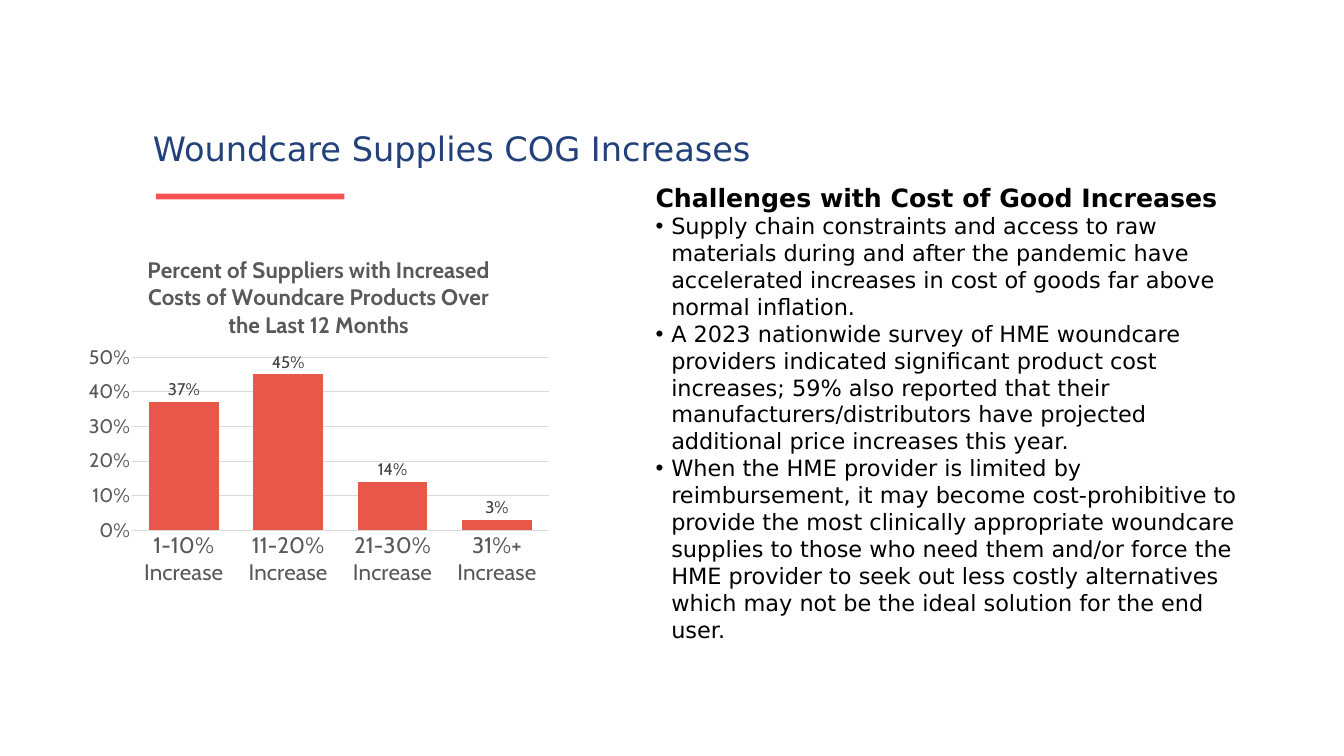
from dataclasses import dataclass

from lxml import etree
from pptx import Presentation
from pptx.chart.data import CategoryChartData
from pptx.dml.color import RGBColor
from pptx.enum import chart as ch
from pptx.enum import shapes, text
from pptx.oxml import parse_xml
from pptx.oxml.ns import nsdecls, qn
from pptx.util import Pt


@dataclass(frozen=True)
class Theme:
    navy: str = "22417B"
    coral: str = "F75152"
    bar: str = "E9564A"
    ink: str = "000000"
    grey: str = "595959"
    label: str = "404040"
    rule: str = "D9D9D9"
    text_font: str = "DejaVu Sans"
    chart_font: str = "Cabin"
    title_size: int = 48
    heading_size: int = 36
    body_size: int = 32
    axis_size: int = 28
    label_size: int = 24


@dataclass(frozen=True)
class Box:
    left: float
    top: float
    width: float
    height: float

    def points(self) -> tuple:
        return Pt(self.left), Pt(self.top), Pt(self.width), Pt(self.height)


@dataclass(frozen=True)
class Point:
    words: str
    bulleted: bool = True


THEME = Theme()
TITLE_BOX = Box(211, 106.5, 1557.5, 163.5)
ACCENT_BOX = Box(222.5, 276.5, 269.5, 8.5)
BODY_BOX = Box(929, 256.5, 851.5, 768)
CHART_BOX = Box(112.5, 343.5, 685.5, 504.5)
PLOT_AREA = {"x": 0.11, "y": 0.33, "w": 0.87, "h": 0.49}
HANGING = Pt(22.5)

CHALLENGES = [
    Point("Challenges with Cost of Good Increases", bulleted=False),
    Point("Supply chain constraints and access to raw materials during and after the "
          "pandemic have accelerated increases in cost of goods far above normal inflation."),
    Point("A 2023 nationwide survey of HME woundcare providers indicated significant product "
          "cost increases; 59% also reported that their manufacturers/distributors have "
          "projected additional price increases this year."),
    Point("When the HME provider is limited by reimbursement, it may become cost-prohibitive "
          "to provide the most clinically appropriate woundcare supplies to those who need "
          "them and/or force the HME provider to seek out less costly alternatives which may "
          "not be the ideal solution for the end user."),
]
CHART_TITLE = "Percent of Suppliers with Increased Costs of Woundcare Products Over the Last 12 Months"
COST_INCREASES = {
    "1-10% Increase": 0.37,
    "11-20% Increase": 0.45,
    "21-30% Increase": 0.14,
    "31%+ Increase": 0.03,
}


def style_font(font, name: str, size: int, color: str, bold: bool = False) -> None:
    font.name, font.size, font.bold = name, Pt(size), bold
    font.color.rgb = RGBColor.from_string(color)


def place(placeholder, box: Box):
    """Move a placeholder and return its top-anchored text frame."""
    placeholder.left, placeholder.top, placeholder.width, placeholder.height = box.points()
    frame = placeholder.text_frame
    frame.word_wrap = True
    frame.auto_size = text.MSO_AUTO_SIZE.NONE
    frame.vertical_anchor = text.MSO_ANCHOR.TOP
    return frame


def set_bullet(paragraph, bulleted: bool) -> None:
    props = paragraph._p.get_or_add_pPr()
    props.set("marL", str(HANGING if bulleted else 0))
    props.set("indent", str(-HANGING if bulleted else 0))
    if bulleted:
        etree.SubElement(props, qn("a:buFont")).set("typeface", "Arial")
        etree.SubElement(props, qn("a:buChar")).set("char", "•")
    else:
        etree.SubElement(props, qn("a:buNone"))


def write_title(slide) -> None:
    frame = place(slide.shapes.title, TITLE_BOX)
    frame.text = "Woundcare Supplies COG Increases"
    heading = frame.paragraphs[0]
    heading.alignment = text.PP_ALIGN.LEFT
    heading.line_spacing = Pt(130)
    style_font(heading.runs[0].font, THEME.text_font, THEME.title_size, THEME.navy)


def write_challenges(slide) -> None:
    frame = place(slide.placeholders[1], BODY_BOX)
    frame.text = "\n".join(point.words for point in CHALLENGES)
    for paragraph, point in zip(frame.paragraphs, CHALLENGES):
        set_bullet(paragraph, point.bulleted)
        paragraph.space_before = Pt(0)
        size = THEME.body_size if point.bulleted else THEME.heading_size
        style_font(paragraph.runs[0].font, THEME.text_font, size, THEME.ink,
                   bold=not point.bulleted)


def draw_accent(slide) -> None:
    accent = slide.shapes.add_shape(shapes.MSO_SHAPE.RECTANGLE, *ACCENT_BOX.points())
    accent.shadow.inherit = False
    accent.fill.solid()
    accent.fill.fore_color.rgb = RGBColor.from_string(THEME.coral)
    accent.line.fill.background()


def style_axis(axis, size: int) -> None:
    axis.major_tick_mark = axis.minor_tick_mark = ch.XL_TICK_MARK.NONE
    style_font(axis.tick_labels.font, THEME.chart_font, size, THEME.grey)


def style_rule(line) -> None:
    line.color.rgb = RGBColor.from_string(THEME.rule)
    line.width = Pt(0.75)


def fix_plot_area(chart) -> None:
    """Pin the inner plot area as fractions of the chart."""
    plot_area = chart._chartSpace.chart.plotArea
    for old in plot_area.findall(qn("c:layout")):
        plot_area.remove(old)
    sizes = "".join(f'<c:{side} val="{share}"/>' for side, share in PLOT_AREA.items())
    plot_area.insert(0, parse_xml(
        f'<c:layout {nsdecls("c")}><c:manualLayout><c:layoutTarget val="inner"/>'
        f'<c:xMode val="edge"/><c:yMode val="edge"/>{sizes}</c:manualLayout></c:layout>'))


def draw_cost_chart(slide) -> None:
    data = CategoryChartData(number_format="0%")
    data.categories = list(COST_INCREASES)
    data.add_series("Series 1", list(COST_INCREASES.values()))
    chart = slide.shapes.add_chart(
        ch.XL_CHART_TYPE.COLUMN_CLUSTERED, *CHART_BOX.points(), data).chart
    style_font(chart.font, THEME.chart_font, 10, THEME.ink)
    chart.has_legend = False
    chart.has_title = True
    title = chart.chart_title.text_frame
    title.text = CHART_TITLE
    style_font(title.paragraphs[0].runs[0].font, THEME.chart_font, THEME.body_size,
               THEME.grey, bold=True)
    chart.chart_title.include_in_layout = False

    style_axis(chart.category_axis, THEME.body_size)
    style_rule(chart.category_axis.format.line)
    percent_axis = chart.value_axis
    style_axis(percent_axis, THEME.axis_size)
    percent_axis.minimum_scale, percent_axis.maximum_scale = 0, 0.5
    percent_axis.major_unit = 0.1
    percent_axis.format.line.fill.background()
    style_rule(percent_axis.major_gridlines.format.line)
    percent_axis.tick_labels.number_format = "0%"
    percent_axis.tick_labels.number_format_is_linked = False

    plot = chart.plots[0]
    plot.vary_by_categories = False
    plot.gap_width, plot.overlap = 50, -27
    suppliers = plot.series[0]
    suppliers.format.fill.solid()
    suppliers.format.fill.fore_color.rgb = RGBColor.from_string(THEME.bar)
    labels = suppliers.data_labels
    labels.show_value = True
    labels.number_format, labels.number_format_is_linked = "0%", False
    labels.position = ch.XL_LABEL_POSITION.OUTSIDE_END
    style_font(labels.font, THEME.chart_font, THEME.label_size, THEME.label)
    fix_plot_area(chart)


def main() -> None:
    deck = Presentation()
    deck.slide_width, deck.slide_height = Pt(1919.5), Pt(1080)
    slide = deck.slides.add_slide(deck.slide_layouts[1])
    draw_accent(slide)
    write_title(slide)
    write_challenges(slide)
    draw_cost_chart(slide)
    deck.save("out.pptx")


if __name__ == "__main__":
    main()
